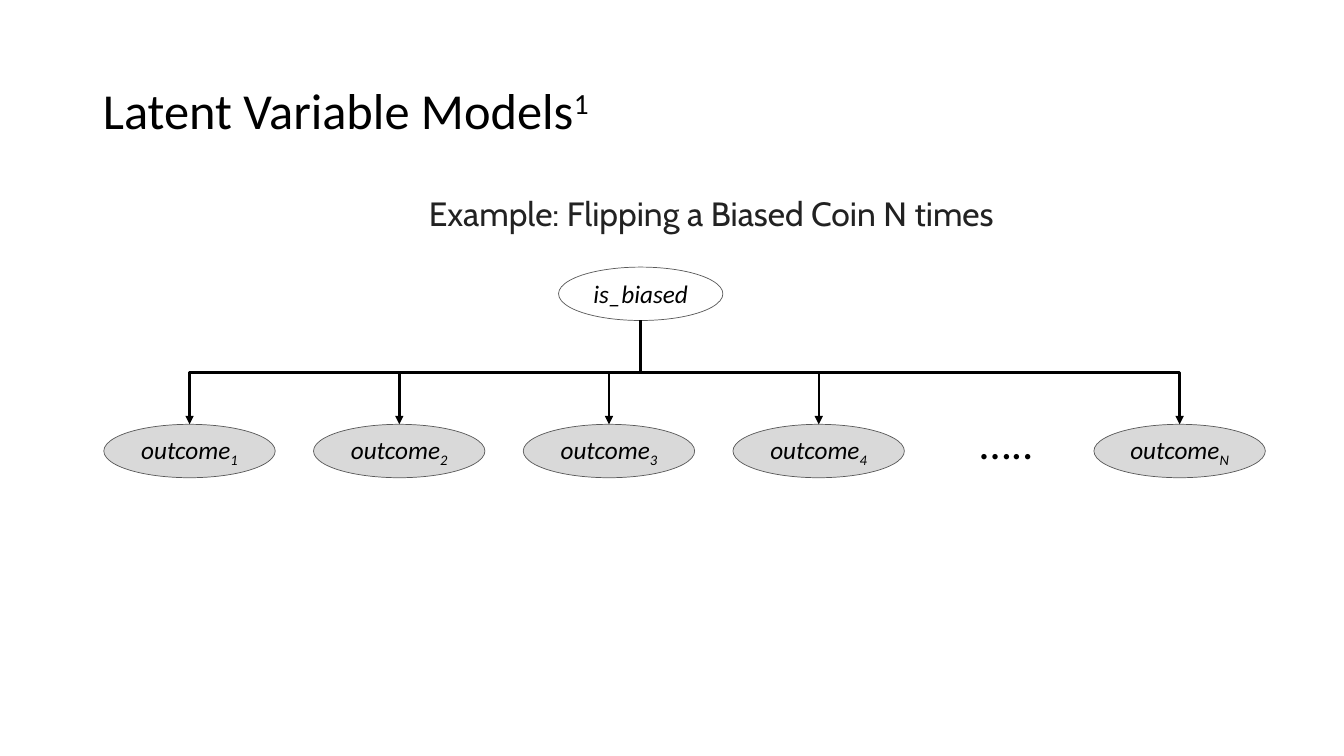
from lxml.etree import SubElement
from pptx import Presentation
from pptx.dml.color import RGBColor
from pptx.enum.shapes import MSO_CONNECTOR as Connector, MSO_SHAPE as Shape
from pptx.enum.text import MSO_ANCHOR as Anchor, PP_ALIGN as Align
from pptx.oxml.ns import qn
from pptx.util import Inches, Pt

BLACK = RGBColor(0x00, 0x00, 0x00)
CHARCOAL = RGBColor(0x22, 0x22, 0x22)
OUTLINE = RGBColor(0x59, 0x59, 0x59)
OBSERVED = RGBColor(0xD9, 0xD9, 0xD9)

NODE_HEIGHT = 0.53
OUTCOME_WIDTH = 1.7
OUTCOME_STEP = 2.08


def write_text(shape, text, size, script="", baseline=0, font="Calibri", color=BLACK,
               italic=False, align=Align.CENTER, anchor=Anchor.MIDDLE, line_spacing=None):
    """Write one paragraph, with an optional raised or lowered ending."""
    frame = shape.text_frame
    frame.word_wrap = True
    frame.vertical_anchor = anchor
    paragraph = frame.paragraphs[0]
    paragraph.alignment = align
    paragraph.line_spacing = line_spacing
    for part, offset in ((text, 0), (script, baseline)):
        if part:
            run = paragraph.add_run()
            run.text = part
            run.font.name = font
            run.font.size = Pt(size)
            run.font.italic = italic
            run.font.color.rgb = color
            if offset:
                run.font._element.set("baseline", str(offset * 1000))
    return paragraph


def add_title(slide, left, top, width, height):
    """Place the slide title with its footnote mark."""
    title = slide.shapes.title
    title.left, title.top = Inches(left), Inches(top)
    title.width, title.height = Inches(width), Inches(height)
    write_text(title, "Latent Variable Models", 36, script="1", baseline=30,
               align=Align.LEFT, line_spacing=0.9)


def add_example(slide, left, top, width, height):
    """Place the indented example heading."""
    box = slide.shapes.add_textbox(Inches(left), Inches(top), Inches(width), Inches(height))
    paragraph = write_text(box, "Example: Flipping a Biased Coin N times", 24, font="Cabin",
                           color=CHARCOAL, anchor=Anchor.TOP, line_spacing=0.9)
    paragraph.space_before = Pt(5)
    properties = paragraph._p.get_or_add_pPr()
    properties.set("marL", str(Inches(0.5)))
    properties.set("indent", "0")


def add_node(slide, left, top, width, text, script="", fill=None):
    """Draw one variable of the model as an ellipse."""
    node = slide.shapes.add_shape(Shape.OVAL, Inches(left), Inches(top),
                                  Inches(width), Inches(NODE_HEIGHT))
    node.shadow.inherit = False
    if fill is None:
        node.fill.background()
    else:
        node.fill.solid()
        node.fill.fore_color.rgb = fill
    node.line.color.rgb = OUTLINE
    node.line.width = Pt(0.5)
    write_text(node, text, 18, script=script, baseline=-25, italic=True)
    return node


def add_branch(slide, parent, child):
    """Draw a bent arrow from the bottom of parent to the top of child."""
    start_x, start_y = parent.left + parent.width // 2, parent.top + parent.height
    end_x, end_y = child.left + child.width // 2, child.top
    drop, reach = end_y - start_y, abs(end_x - start_x)
    left = (start_x + end_x - drop) // 2
    top = (start_y + end_y - reach) // 2
    goes_right = end_x > start_x
    begin, end = (left + drop, left) if goes_right else (left, left + drop)
    branch = slide.shapes.add_connector(Connector.ELBOW, begin, top, end, top + reach)
    branch.line.color.rgb = BLACK
    branch.line.width = Pt(1.75)
    properties = branch._element.spPr
    properties.find(qn("a:xfrm")).set("rot", str((270 if goes_right else 90) * 60000))
    SubElement(properties.find(qn("a:ln")), qn("a:tailEnd"), type="triangle")
    SubElement(properties, qn("a:effectLst"))


def add_model(slide, left, top):
    """Draw the hidden variable, its outcomes and the arrows between them."""
    hidden = add_node(slide, left + 4.51, top, 1.63, "is_biased")
    outcome_top = top + 1.56
    offsets = [index * OUTCOME_STEP for index in range(4)] + [9.82]
    for offset, script in zip(offsets, "1234N"):
        outcome = add_node(slide, left + offset, outcome_top, OUTCOME_WIDTH,
                           "outcome", script, OBSERVED)
        add_branch(slide, hidden, outcome)
    dots = slide.shapes.add_textbox(Inches(left + 8.24), Inches(top + 1.42),
                                    Inches(1.43), Inches(0.64))
    write_text(dots, "…..", 32, anchor=Anchor.TOP)


def main():
    """Build and save the presentation."""
    presentation = Presentation()
    presentation.slide_width, presentation.slide_height = Inches(13.33), Inches(7.5)
    slide = presentation.slides.add_slide(presentation.slide_layouts[5])
    add_title(slide, 0.92, 0.4, 11.5, 1.45)
    add_example(slide, 0.92, 1.91, 11.77, 0.6)
    add_model(slide, 1.03, 2.65)
    presentation.save("out.pptx")


if __name__ == "__main__":
    main()
